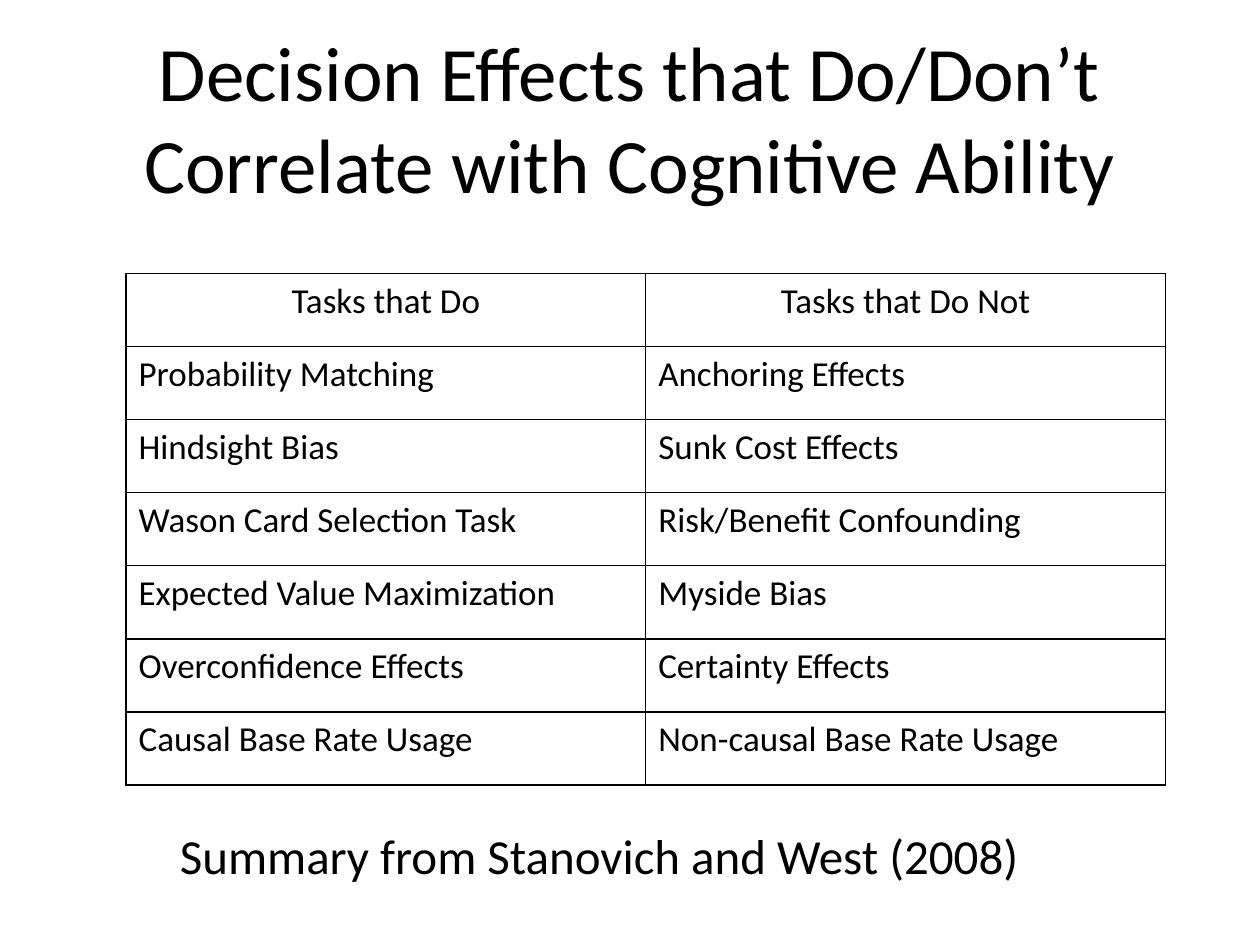
from dataclasses import dataclass

from lxml import etree
from pptx import Presentation, util as u
from pptx.dml.color import RGBColor
from pptx.enum import text
from pptx.oxml import ns


@dataclass(frozen=True)
class Theme:
    font: str = "Calibri"
    ink: str = "000000"
    title_size: int = 44
    table_size: int = 20
    source_size: int = 28
    border_width: int = 1


@dataclass(frozen=True)
class TaskPair:
    correlated: str
    uncorrelated: str


THEME = Theme()
HEADER = TaskPair("Tasks that Do", "Tasks that Do Not")
TASKS = [
    TaskPair("Probability Matching", "Anchoring Effects"),
    TaskPair("Hindsight Bias", "Sunk Cost Effects"),
    TaskPair("Wason Card Selection Task", "Risk/Benefit Confounding"),
    TaskPair("Expected Value Maximization", "Myside Bias"),
    TaskPair("Overconfidence Effects", "Certainty Effects"),
    TaskPair("Causal Base Rate Usage", "Non-causal Base Rate Usage"),
]


def write(frame, words: str, size: int, align=text.PP_ALIGN.LEFT) -> None:
    """Set one paragraph of text in the theme's font and colour."""
    frame.text = words
    para = frame.paragraphs[0]
    para.alignment = align
    span = para.runs[0]
    span.font.name = THEME.font
    span.font.size = u.Pt(size)
    span.font.color.rgb = RGBColor.from_string(THEME.ink)


def add_borders(cell) -> None:
    """Draw a solid line on all four sides of a cell."""
    properties = cell._tc.get_or_add_tcPr()
    for side in ("lnL", "lnR", "lnT", "lnB"):
        line = etree.SubElement(properties, ns.qn(f"a:{side}"),
                                w=str(u.Pt(THEME.border_width)))
        fill = etree.SubElement(line, ns.qn("a:solidFill"))
        etree.SubElement(fill, ns.qn("a:srgbClr"), val=THEME.ink)


def add_title(page, words: str) -> None:
    title = page.shapes.title
    title.left, title.top = u.Inches(0.5), u.Inches(0.3)
    title.width, title.height = u.Inches(9), u.Inches(1.25)
    write(title.text_frame, words, THEME.title_size, text.PP_ALIGN.CENTER)
    title.text_frame.vertical_anchor = text.MSO_ANCHOR.MIDDLE


def add_task_table(page, pairs: list[TaskPair]) -> None:
    row_height = u.Inches(0.58)
    table = page.shapes.add_table(
        len(pairs), 2, u.Inches(1), u.Inches(2.17),
        u.Inches(8.25), row_height * len(pairs)).table
    table.first_row = table.horz_banding = False
    for row, pair in enumerate(pairs):
        table.rows[row].height = row_height
        align = text.PP_ALIGN.LEFT if row else text.PP_ALIGN.CENTER
        for column, words in enumerate((pair.correlated, pair.uncorrelated)):
            cell = table.cell(row, column)
            write(cell.text_frame, words, THEME.table_size, align)
            add_borders(cell)
            cell.fill.background()


def add_source(page, words: str) -> None:
    box = page.shapes.add_textbox(u.Inches(1.33), u.Inches(6.5),
                                  u.Inches(7.63), u.Inches(0.57))
    box.text_frame.word_wrap = True
    write(box.text_frame, words, THEME.source_size)


def main() -> None:
    deck = Presentation()
    deck.slide_width, deck.slide_height = u.Inches(10), u.Inches(7.5)
    page = deck.slides.add_slide(deck.slide_layouts.get_by_name("Title Only"))

    # Title, comparison table and source line
    add_title(page, "Decision Effects that Do/Don’t Correlate with Cognitive Ability")
    add_task_table(page, [HEADER, *TASKS])
    add_source(page, "Summary from Stanovich and West (2008)")

    deck.save("out.pptx")


if __name__ == "__main__":
    main()
